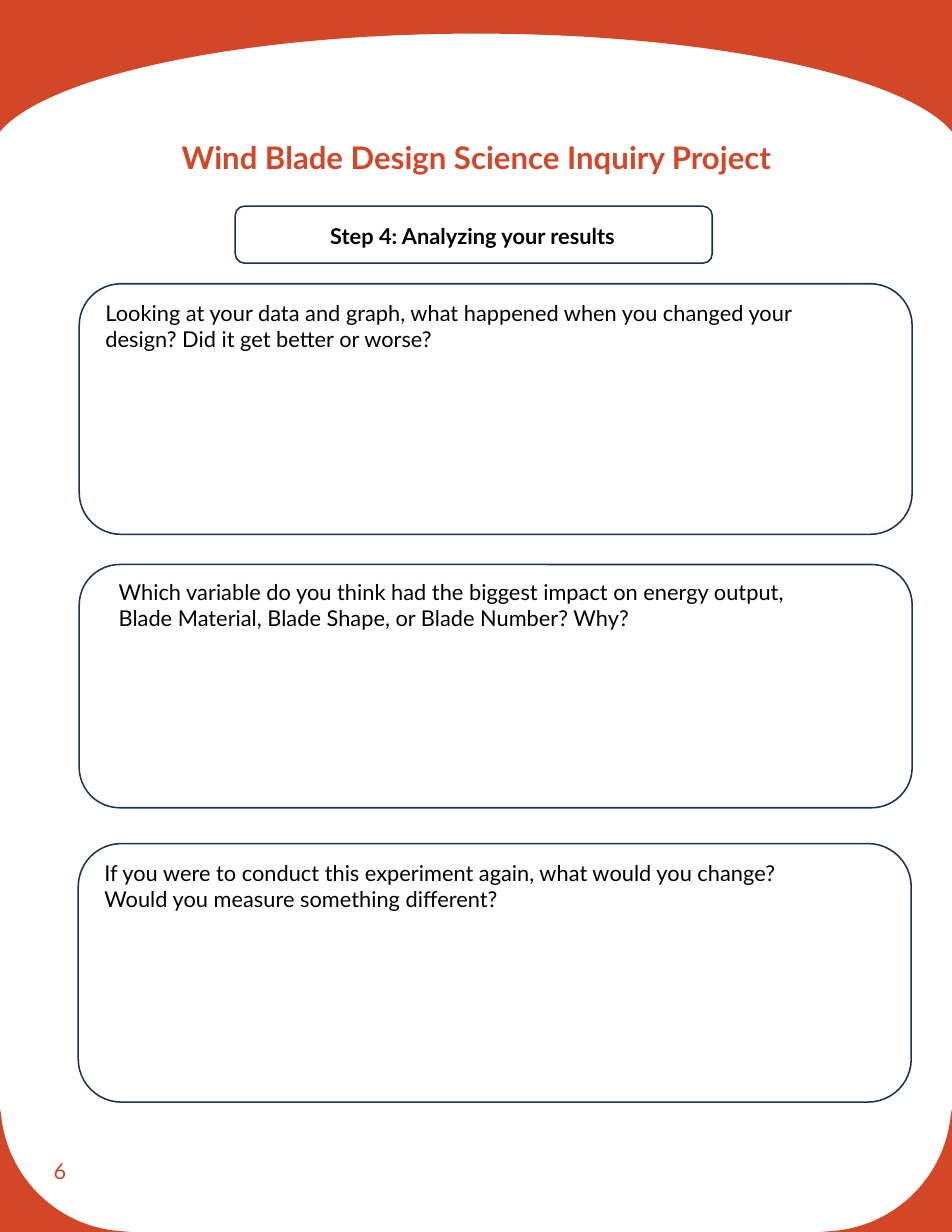
from lxml import etree
from pptx import Presentation
from pptx.dml.color import RGBColor
from pptx.enum.shapes import MSO_SHAPE as SHAPE
from pptx.enum.text import MSO_ANCHOR as ANCHOR, MSO_AUTO_SIZE as AUTO, PP_ALIGN as ALIGN
from pptx.oxml.ns import qn
from pptx.util import Pt

ORANGE, NAVY, BLACK = "D34728", "1E3256", "000000"
W, H = 612, 792


def color(fmt, value):
    fmt.rgb = RGBColor.from_string(value)


def write(tf, lines, size, value, bold=False, wrap=True):
    tf.word_wrap = wrap
    tf.auto_size = AUTO.NONE
    for i, line in enumerate(lines):
        p = tf.paragraphs[0] if i == 0 else tf.add_paragraph()
        p.text = line
        p.font.name, p.font.size, p.font.bold = "Lato", Pt(size), bold
        color(p.font.color, value)


prs = Presentation()
prs.slide_width, prs.slide_height = Pt(W), Pt(H)
s = prs.slides.add_slide(prs.slide_layouts[5])

# Title
sp = s.shapes.title
sp.left, sp.top, sp.width, sp.height = Pt(25.9), Pt(78), Pt(560.9), Pt(61.9)
write(sp.text_frame, ["Wind Blade Design Science Inquiry Project"], 20, ORANGE, True)
sp.text_frame.vertical_anchor = ANCHOR.TOP
p = sp.text_frame.paragraphs[0]
p.alignment, p.line_spacing = ALIGN.CENTER, 1.3

# Orange page corners: straight points, Bezier points in threes, closing points
left = ([(0, H), (0, 712.8), (0.7, 716.4)],
        [(4.3, 756), (36, 787.7), (75.6, 791.3)],
        [(84.2, H)])
right = [[(W - x, y) for x, y in part] for part in left]
top = ([(0, 0), (W, 0), (W, 84.6)],
       [(582.5, 49), (456.5, 21.6), (306, 21.6), (155.5, 21.6), (29.5, 49), (0, 84.6)],
       [])
for start, curve, end in (top, left, right):
    points = [(Pt(x), Pt(y)) for x, y in [*start, *curve, *end]]
    fb = s.shapes.build_freeform(*points[0], 1.0)
    fb.add_line_segments(points[1:], close=True)
    sp = fb.convert_to_shape()
    sp.shadow.inherit = False
    sp.fill.solid()
    color(sp.fill.fore_color, ORANGE)
    sp.line.fill.background()
    # Join each three curve points into one Bezier segment
    segments = list(sp._element.iter(qn("a:lnTo")))[len(start) - 1:]
    for k in range(0, len(curve), 3):
        bezier = etree.Element(qn("a:cubicBezTo"))
        segments[k].addprevious(bezier)
        for segment in segments[k:k + 3]:
            bezier.append(segment[0])
            segment.getparent().remove(segment)

# Page number
sp = s.shapes.add_textbox(Pt(27.4), Pt(731.5), Pt(137.5), Pt(42.5))
write(sp.text_frame, ["6"], 14, ORANGE)
sp.text_frame.vertical_anchor = ANCHOR.MIDDLE

# Step heading and question boxes: frame, text box, lines, is heading
boxes = [
    ((151.2, 132.5, 306.7, 36.7), (205.2, 139.7, 297.4, 24.5),
     ["Step 4: Analyzing your results"], True),
    ((50.9, 182.4, 535.5, 161.1), (60.7, 189.2, 514.8, 41),
     ["Looking at your data and graph, what happened when you changed your",
      "design? Did it get better or worse?"], False),
    ((50.9, 362.9, 535.5, 156.4), (69.2, 368.6, 493.2, 24.5),
     ["Which variable do you think had the biggest impact on energy output,",
      "Blade Material, Blade Shape, or Blade Number? Why?"], False),
    ((50.3, 542.3, 535.5, 166.2), (60, 549.2, 494.6, 41),
     ["If you were to conduct this experiment again, what would you change?",
      "Would you measure something different?"], False),
]
for frame, text_box, lines, heading in boxes:
    group = s.shapes.add_group_shape()
    sp = group.shapes.add_shape(SHAPE.ROUNDED_RECTANGLE, *map(Pt, frame))
    sp.shadow.inherit = False
    sp.fill.background()
    color(sp.line.color, NAVY)
    sp.line.width = Pt(1)
    sp = group.shapes.add_textbox(*map(Pt, text_box))
    write(sp.text_frame, lines, 14, BLACK, bold=heading, wrap=heading)

prs.save("out.pptx")
